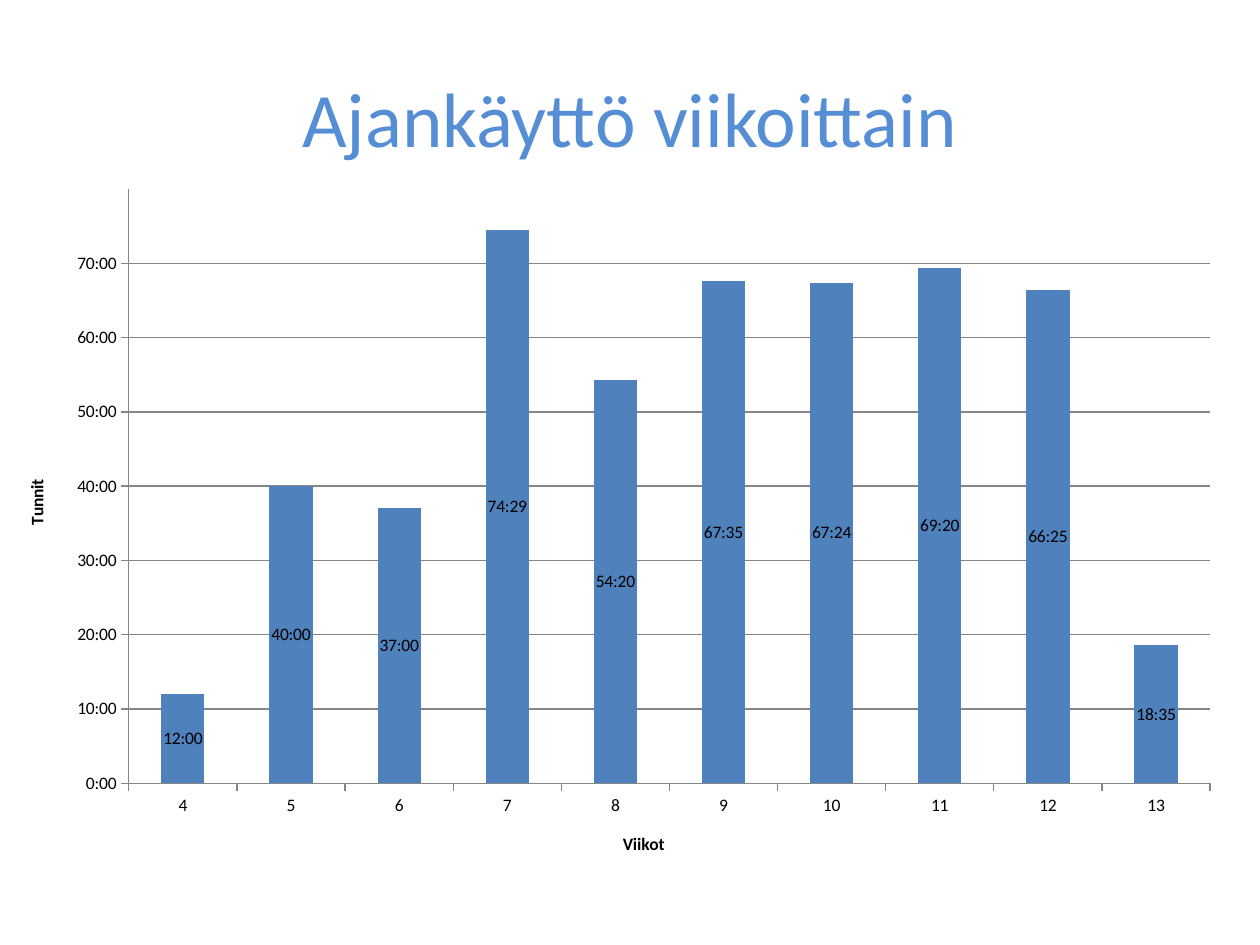
from dataclasses import dataclass

from pptx import Presentation
from pptx.chart.data import CategoryChartData
from pptx.dml.color import RGBColor
from pptx.enum.chart import XL_CHART_TYPE, XL_LABEL_POSITION, XL_TICK_MARK
from pptx.enum.text import MSO_ANCHOR, PP_ALIGN
from pptx.util import Pt


@dataclass
class Theme:
    font: str = "Calibri"
    title_color: RGBColor = RGBColor(0x55, 0x8E, 0xD5)
    bar_color: RGBColor = RGBColor(0x4F, 0x81, 0xBD)
    line_color: RGBColor = RGBColor(0x86, 0x86, 0x86)
    text_color: RGBColor = RGBColor(0, 0, 0)
    title_size: Pt = Pt(44)
    chart_size: Pt = Pt(10)


def style_font(font, size, color, bold=False):
    font.name = theme.font
    font.size = size
    font.color.rgb = color
    font.bold = bold


def day_fraction(time):
    hours, minutes = time.split(":")
    return round((int(hours) + int(minutes) / 60) / 24, 6)


theme = Theme()
time_format = "[h]:mm"
weekly_times = {
    "4": "12:00",
    "5": "40:00",
    "6": "37:00",
    "7": "74:29",
    "8": "54:20",
    "9": "67:35",
    "10": "67:24",
    "11": "69:20",
    "12": "66:25",
    "13": "18:35",
}

presentation = Presentation()
presentation.slide_width = Pt(720)
presentation.slide_height = Pt(540)
slide = presentation.slides.add_slide(presentation.slide_layouts[5])

title = slide.shapes.title
title.left, title.top, title.width, title.height = Pt(36), Pt(21.6), Pt(648), Pt(90)
title.text_frame.text = "Ajankäyttö viikoittain"
title.text_frame.vertical_anchor = MSO_ANCHOR.MIDDLE
paragraph = title.text_frame.paragraphs[0]
paragraph.alignment = PP_ALIGN.CENTER
style_font(paragraph.runs[0].font, theme.title_size, theme.title_color)

chart_data = CategoryChartData(number_format=time_format)
chart_data.categories = list(weekly_times)
chart_data.add_series("Series 1", [day_fraction(time) for time in weekly_times.values()])
chart = slide.shapes.add_chart(
    XL_CHART_TYPE.COLUMN_STACKED, Pt(0), Pt(100), Pt(705.6), Pt(403.2), chart_data
).chart
chart.has_title = False
chart.has_legend = False
style_font(chart.font, theme.chart_size, theme.text_color)

plot = chart.plots[0]
plot.gap_width = 150
plot.overlap = 100
plot.vary_by_categories = False
series = plot.series[0]
series.format.fill.solid()
series.format.fill.fore_color.rgb = theme.bar_color

plot.has_data_labels = True
labels = plot.data_labels
labels.show_value = True
labels.number_format = time_format
labels.number_format_is_linked = False
labels.position = XL_LABEL_POSITION.CENTER
style_font(labels.font, theme.chart_size, theme.text_color)

for axis, caption in ((chart.category_axis, "Viikot"), (chart.value_axis, "Tunnit")):
    axis.axis_title.text_frame.text = caption
    caption_run = axis.axis_title.text_frame.paragraphs[0].runs[0]
    style_font(caption_run.font, theme.chart_size, theme.text_color, bold=True)
    style_font(axis.tick_labels.font, theme.chart_size, theme.text_color)
    axis.major_tick_mark = XL_TICK_MARK.OUTSIDE
    axis.minor_tick_mark = XL_TICK_MARK.NONE
    axis.format.line.color.rgb = theme.line_color
    axis.format.line.width = Pt(0.75)

value_axis = chart.value_axis
value_axis.minimum_scale = 0
value_axis.maximum_scale = day_fraction("80:00")
value_axis.major_unit = day_fraction("10:00")
value_axis.tick_labels.number_format = time_format
value_axis.tick_labels.number_format_is_linked = False
value_axis.has_major_gridlines = True
value_axis.major_gridlines.format.line.color.rgb = theme.line_color
value_axis.major_gridlines.format.line.width = Pt(0.75)

presentation.save("out.pptx")
